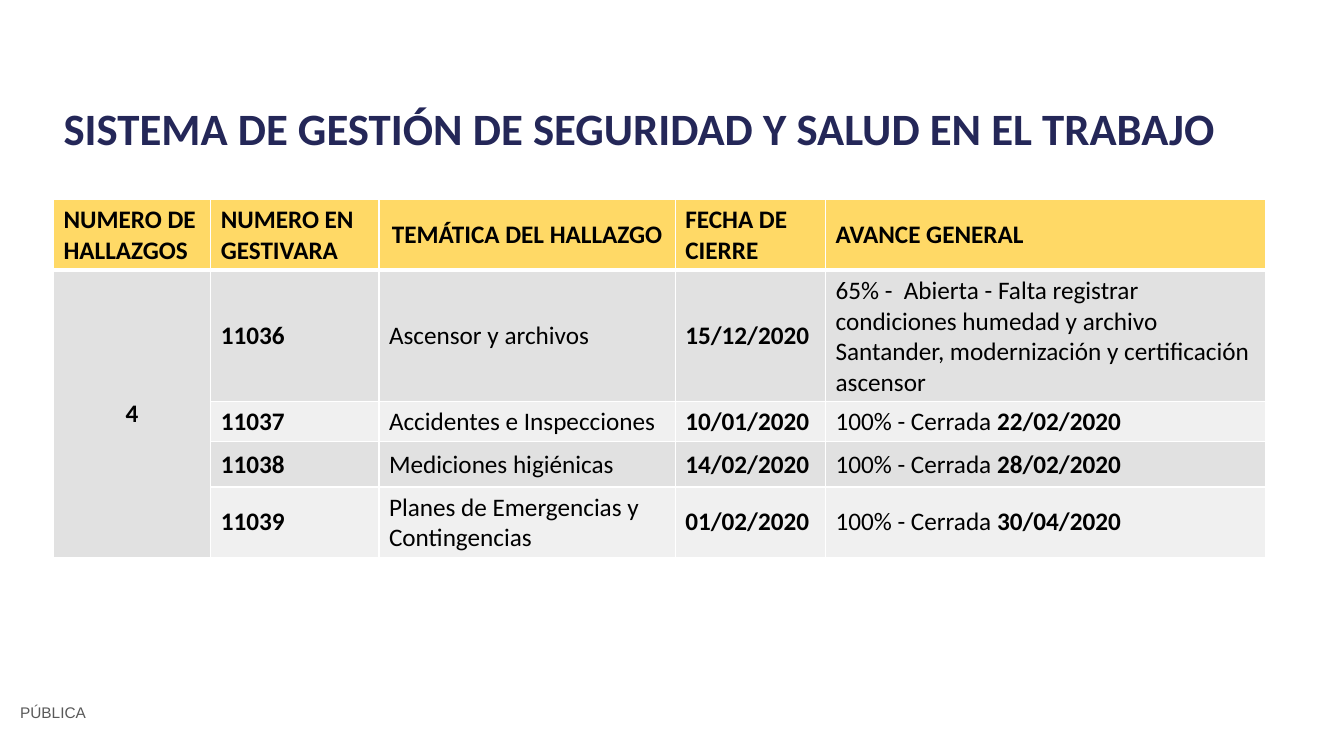
from lxml.etree import SubElement
from pptx import Presentation
from pptx.dml.color import RGBColor
from pptx.enum.text import MSO_ANCHOR, MSO_AUTO_SIZE, PP_ALIGN
from pptx.oxml.ns import qn
from pptx.util import Pt

COLORS = {
    "title": "242758",
    "label": "595959",
    "text": "000000",
    "header": "FFD966",
    "odd": "E1E1E1",
    "even": "F0F0F0",
    "border": "FFFFFF",
}
COL_WIDTHS = [112.3, 120.2, 211.7, 107.3, 314.6]
ROW_HEIGHTS = [50.4, 93.6, 28.8, 32.4, 50.4]
HEADERS = ["NUMERO DE HALLAZGOS", "NUMERO EN GESTIVARA", "TEMÁTICA DEL HALLAZGO",
           "FECHA DE CIERRE", "AVANCE GENERAL"]
# Number, topic, closing date, progress, date of the progress
FINDINGS = [
    ("11036", "Ascensor y archivos", "15/12/2020",
     "65% -  Abierta - Falta registrar condiciones humedad y archivo "
     "Santander, modernización y certificación ascensor", ""),
    ("11037", "Accidentes e Inspecciones", "10/01/2020", "100% - Cerrada ", "22/02/2020"),
    ("11038", "Mediciones higiénicas", "14/02/2020", "100% - Cerrada ", "28/02/2020"),
    ("11039", "Planes de Emergencias y Contingencias", "01/02/2020",
     "100% - Cerrada ", "30/04/2020"),
]


class SlideBuilder:
    def __init__(self, slide, font="Calibri"):
        self.slide = slide
        self.font = font

    def format_run(self, r, size, color, bold=False, font=None):
        r.font.name = font or self.font
        r.font.size = Pt(size)
        r.font.bold = bold
        r.font.color.rgb = RGBColor.from_string(COLORS[color])

    def title(self, text, left, top, width, height):
        sp = self.slide.shapes.title
        sp.left, sp.top, sp.width, sp.height = Pt(left), Pt(top), Pt(width), Pt(height)
        tf = sp.text_frame
        tf.text = text
        tf.auto_size = MSO_AUTO_SIZE.NONE
        tf.vertical_anchor = MSO_ANCHOR.TOP
        p = tf.paragraphs[0]
        p.alignment = PP_ALIGN.LEFT
        self.format_run(p.runs[0], 32, "title", bold=True)

    def label(self, text, left, top, width, height):
        sp = self.slide.shapes.add_textbox(Pt(left), Pt(top), Pt(width), Pt(height))
        tf = sp.text_frame
        tf.word_wrap = True
        tf.text = text
        self.format_run(tf.paragraphs[0].runs[0], 11, "label", font="Arial")

    def table(self, left, top, widths, heights):
        frame = self.slide.shapes.add_table(
            len(heights), len(widths), Pt(left), Pt(top), Pt(sum(widths)), Pt(sum(heights)))
        table = frame.table
        for column, width in zip(table.columns, widths):
            column.width = Pt(width)
        for row, height in zip(table.rows, heights):
            row.height = Pt(height)
        return table

    def cell(self, cell, fill, regular="", bold="", centered=False, top=1, bottom=1):
        """Fill a cell with regular text followed by bold text; top and bottom are line widths."""
        self.borders(cell, {"L": 1, "R": 1, "T": top, "B": bottom})
        cell.fill.solid()
        cell.fill.fore_color.rgb = RGBColor.from_string(COLORS[fill])
        cell.vertical_anchor = MSO_ANCHOR.MIDDLE
        p = cell.text_frame.paragraphs[0]
        p.alignment = PP_ALIGN.CENTER if centered else PP_ALIGN.LEFT
        for text, is_bold in ((regular, False), (bold, True)):
            if text:
                r = p.add_run()
                r.text = text
                self.format_run(r, 18, "text", bold=is_bold)

    def borders(self, cell, widths):
        tcPr = cell._tc.get_or_add_tcPr()
        for side, width in widths.items():
            ln = SubElement(tcPr, qn(f"a:ln{side}"), w=str(Pt(width)))
            fill = SubElement(ln, qn("a:solidFill"))
            SubElement(fill, qn("a:srgbClr"), val=COLORS["border"])


def main():
    prs = Presentation()
    prs.slide_width, prs.slide_height = Pt(960), Pt(540)
    builder = SlideBuilder(prs.slides.add_slide(prs.slide_layouts[5]))

    builder.label("PÚBLICA", 7.2, 499, 85.7, 20.9)
    builder.title("SISTEMA DE GESTIÓN DE SEGURIDAD Y SALUD EN EL TRABAJO",
                  38.2, 68.4, 842.4, 46)

    table = builder.table(38.2, 142.6, COL_WIDTHS, ROW_HEIGHTS)
    for col, header in enumerate(HEADERS):
        builder.cell(table.cell(0, col), "header", bold=header, centered=col == 2, bottom=3)

    count = table.cell(1, 0)
    count.merge(table.cell(len(FINDINGS), 0))
    builder.cell(count, "odd", bold=str(len(FINDINGS)), centered=True, top=3)

    for row, (number, topic, closing, progress, date) in enumerate(FINDINGS, start=1):
        fill = "odd" if row % 2 else "even"
        contents = [("", number), (topic, ""), ("", closing), (progress, date)]
        for col, (regular, bold) in enumerate(contents, start=1):
            builder.cell(table.cell(row, col), fill, regular, bold, top=3 if row == 1 else 1)

    prs.save("out.pptx")


if __name__ == "__main__":
    main()
